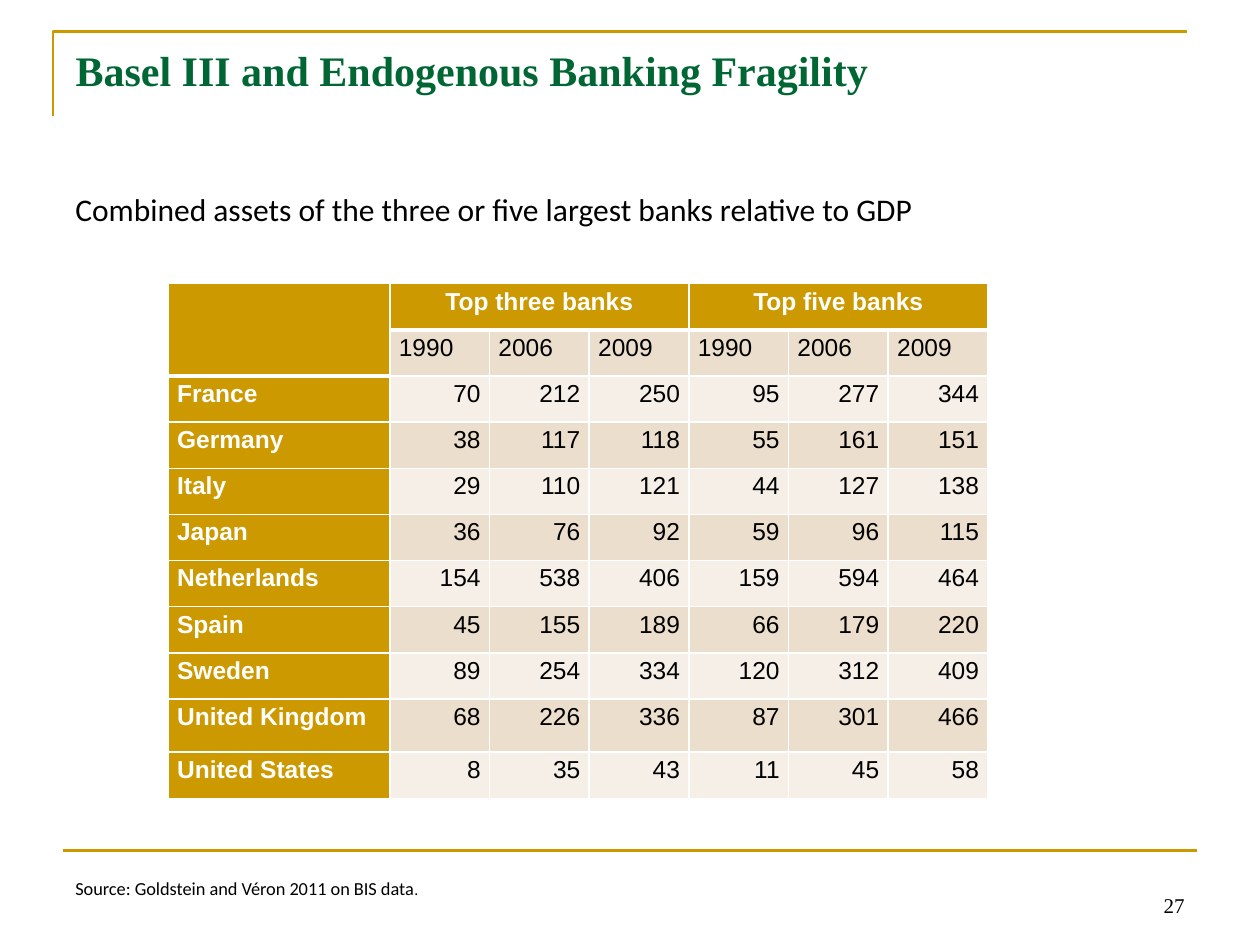
"""Build the slide on bank assets relative to GDP."""
from dataclasses import dataclass

from lxml.etree import SubElement
from pptx import Presentation
from pptx.dml.color import RGBColor
from pptx.enum.shapes import MSO_CONNECTOR
from pptx.enum.text import MSO_ANCHOR, PP_ALIGN
from pptx.oxml import parse_xml
from pptx.oxml.ns import nsdecls, qn
from pptx.util import Cm, Pt

HUES = {
    "gold": "CC9900",
    "green": "006633",
    "white": "FFFFFF",
    "black": "000000",
    "dark": "ECDECC",
    "light": "F6EFE7",
}


@dataclass
class Row:
    land: str
    three: tuple
    five: tuple


@dataclass
class Note:
    left: float
    top: float
    width: float
    height: float
    texts: tuple
    font: str = "Calibri"
    align: PP_ALIGN = PP_ALIGN.LEFT
    anchor: MSO_ANCHOR = MSO_ANCHOR.MIDDLE


YEARS = ("1990", "2006", "2009")
ROWS = [
    Row("France", (70, 212, 250), (95, 277, 344)),
    Row("Germany", (38, 117, 118), (55, 161, 151)),
    Row("Italy", (29, 110, 121), (44, 127, 138)),
    Row("Japan", (36, 76, 92), (59, 96, 115)),
    Row("Netherlands", (154, 538, 406), (159, 594, 464)),
    Row("Spain", (45, 155, 189), (66, 179, 220)),
    Row("Sweden", (89, 254, 334), (120, 312, 409)),
    Row("United Kingdom", (68, 226, 336), (87, 301, 466)),
    Row("United States", (8, 35, 43), (11, 45, 58)),
]
NOTES = [
    Note(1.27, 3.71, 20.96, 1.02,
         (("Combined assets of the three or five largest banks relative to GDP", 18),)),
    Note(1.27, 17.55, 11.86, 0.71,
         (("Source: Goldstein and Véron 2011 on BIS data", 10.5), (".", 9))),
    Note(18.21, 17.35, 5.92, 1.27, (("27", 12),), "Times New Roman",
         PP_ALIGN.RIGHT, MSO_ANCHOR.BOTTOM),
]


def hue(name: str) -> RGBColor:
    return RGBColor.from_string(HUES[name])


def put(frame, text: str, *, size: float = 14, font: str = "Arial",
        color: str = "black", bold: bool = False,
        align: PP_ALIGN = PP_ALIGN.LEFT, space: float = 1.0) -> None:
    para = frame.paragraphs[0]
    para.alignment, para.line_spacing = align, space
    run = para.add_run()
    run.text = text
    run.font.size, run.font.name, run.font.bold = Pt(size), font, bold
    run.font.color.rgb = hue(color)


def ink(shape) -> None:
    shape.line.color.rgb = hue("gold")
    shape.line.width = Pt(1.5)


def border(shapes) -> None:
    trace = shapes.build_freeform(Cm(1.07), Cm(2.33))
    trace.add_line_segments([(Cm(1.07), Cm(0.63)), (Cm(23.93), Cm(0.63))], close=False)
    edge = trace.convert_to_shape()
    edge.fill.background()
    edge.shadow.inherit = False
    ink(edge)
    rule = shapes.add_connector(MSO_CONNECTOR.STRAIGHT,
                                Cm(1.27), Cm(17.15), Cm(24.13), Cm(17.15))
    ink(rule)
    SubElement(rule._element.spPr, qn("a:effectLst"))


def write(shapes, note: Note) -> None:
    box = shapes.add_textbox(Cm(note.left), Cm(note.top), Cm(note.width), Cm(note.height))
    body = box.text_frame
    body.word_wrap = True
    body.vertical_anchor = note.anchor
    for text, size in note.texts:
        put(body, text, size=size, font=note.font, align=note.align)


def edges(cell, top: float, base: float) -> None:
    props = cell._tc.get_or_add_tcPr()
    for spot, (side, wide) in enumerate(zip("LRTB", (1, 1, top, base))):
        props.insert(spot, parse_xml(
            f'<a:ln{side} {nsdecls("a")} w="{Pt(wide)}"><a:solidFill>'
            f'<a:srgbClr val="{HUES["white"]}"/></a:solidFill></a:ln{side}>'))


def grid(shapes) -> None:
    texts = [["", "Top three banks", "", "", "Top five banks", "", ""], ["", *YEARS, *YEARS]]
    texts += [[row.land, *map(str, row.three + row.five)] for row in ROWS]
    table = shapes.add_table(len(texts), 7, Cm(3.39), Cm(5.72), Cm(16.53), Cm(10.39)).table
    for col, band in enumerate(table.columns):
        band.width = Cm(2.01 if col else 4.47)
    tall = {9: 1.07, 10: 0.95}
    for pos, band in enumerate(table.rows):
        band.height = Cm(tall.get(pos, 0.93))
    for pos, line in enumerate(texts):
        for col, text in enumerate(line):
            cell = table.cell(pos, col)
            head = pos == 0 or col == 0
            cell.margin_left = cell.margin_right = Cm(0.18)
            cell.margin_top = cell.margin_bottom = 0
            cell.fill.solid()
            cell.fill.fore_color.rgb = hue("gold" if head else "dark" if pos % 2 else "light")
            last = 0 if col else 1
            edges(cell, 3 if pos == last + 1 else 1, 3 if pos <= last else 1)
            cell.text_frame.paragraphs[0].font.size = Pt(14)
            if text:
                align = (PP_ALIGN.CENTER if pos == 0 else
                         PP_ALIGN.RIGHT if pos > 1 and col else PP_ALIGN.LEFT)
                put(cell.text_frame, text, color="white" if head else "black",
                    bold=head, align=align, space=1.15)
    table.cell(0, 0).merge(table.cell(1, 0))
    for col in (1, 4):
        table.cell(0, col).merge(table.cell(0, col + 2))


def main() -> None:
    deck = Presentation()
    deck.slide_width, deck.slide_height = Cm(25.4), Cm(19.05)
    slide = deck.slides.add_slide(deck.slide_layouts[5])
    shapes = slide.shapes
    title = shapes.title
    title.left, title.top, title.width, title.height = Cm(1.27), Cm(0.76), Cm(22.86), Cm(1.78)
    title.text_frame.vertical_anchor = MSO_ANCHOR.TOP
    put(title.text_frame, "Basel III and Endogenous Banking Fragility", size=24,
        font="Times New Roman", color="green", bold=True)
    border(shapes)
    grid(shapes)
    for note in NOTES:
        write(shapes, note)
    deck.save("out.pptx")


if __name__ == "__main__":
    main()
